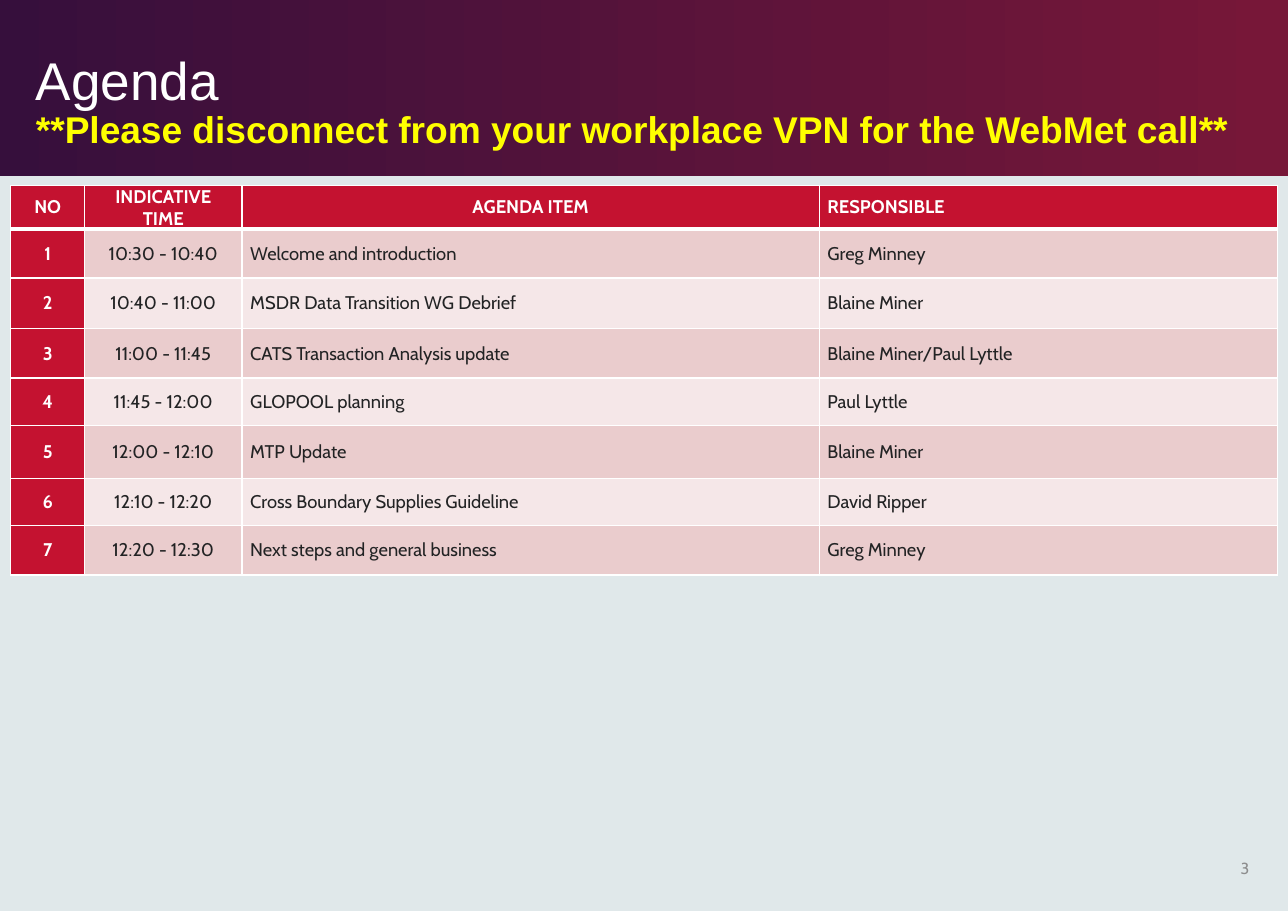
from lxml import etree
from pptx import Presentation
from pptx.dml.color import RGBColor
from pptx.enum.shapes import MSO_SHAPE
from pptx.enum.text import MSO_ANCHOR, PP_ALIGN
from pptx.oxml.ns import qn
from pptx.util import Cm, Pt

RECTANGLE = MSO_SHAPE.RECTANGLE
MIDDLE, BOTTOM = MSO_ANCHOR.MIDDLE, MSO_ANCHOR.BOTTOM
LEFT, CENTER, RIGHT = PP_ALIGN.LEFT, PP_ALIGN.CENTER, PP_ALIGN.RIGHT

COLORS = {
    "background": "E0E8EA",
    "banner_start": "360F3C",
    "banner_end": "771738",
    "white": "FFFFFF",
    "notice": "FFFF00",
    "page": "8D8D8E",
    "header": "C41230",
    "odd_row": "EACCCD",
    "even_row": "F5E7E8",
    "body": "222324",
}

COLUMN_WIDTHS = [1.7, 3.63, 13.31, 10.57]
ROW_HEIGHTS = [0.99, 1.12, 1.17, 1.14, 1.09, 1.22, 1.09, 1.14]
HEADINGS = ["NO", "INDICATIVE TIME", "AGENDA ITEM", "RESPONSIBLE"]
AGENDA = [
    ("10:30 - 10:40", "Welcome and introduction", "Greg Minney"),
    ("10:40 - 11:00", "MSDR Data Transition WG Debrief", "Blaine Miner"),
    ("11:00 - 11:45", "CATS Transaction Analysis update", "Blaine Miner/Paul Lyttle"),
    ("11:45 - 12:00", "GLOPOOL planning", "Paul Lyttle"),
    ("12:00 - 12:10", "MTP Update", "Blaine Miner"),
    ("12:10 - 12:20", "Cross Boundary Supplies Guideline", "David Ripper"),
    ("12:20 - 12:30", "Next steps and general business", "Greg Minney"),
]


class AgendaSlide:
    """Draws styled elements on one slide."""

    def __init__(self, slide):
        self.slide = slide
        background = slide.background.fill
        background.solid()
        background.fore_color.rgb = self.color("background")

    def color(self, name):
        return RGBColor.from_string(COLORS[name])

    def style(self, run, size, color, font="Cabin", bold=False):
        run.font.name = font
        run.font.size = Pt(size)
        run.font.bold = bold
        run.font.color.rgb = self.color(color)

    def banner(self, left, top, width, height):
        band = self.slide.shapes.add_shape(
            RECTANGLE, Cm(left), Cm(top), Cm(width), Cm(height))
        band.shadow.inherit = False
        band.line.fill.background()
        band.fill.gradient()
        band.fill.gradient_angle = 0
        ends = [("banner_start", 0), ("banner_end", 0.99)]
        for stop, (name, position) in zip(band.fill.gradient_stops, ends):
            stop.color.rgb = self.color(name)
            stop.position = position

    def text(self, left, top, width, height, lines, anchor, align=LEFT, spacing=1.0):
        frame = self.slide.shapes.add_textbox(
            Cm(left), Cm(top), Cm(width), Cm(height)).text_frame
        frame.word_wrap = True
        frame.vertical_anchor = anchor
        paragraph = frame.paragraphs[0]
        paragraph.text = "\n".join(words for words, _ in lines)
        paragraph.alignment = align
        paragraph.line_spacing = spacing
        for run, (_, look) in zip(paragraph.runs, lines):
            self.style(run, **look)

    def border(self, cell, side, points):
        line = etree.SubElement(
            cell._tc.get_or_add_tcPr(), qn(f"a:ln{side}"), w=str(Pt(points)))
        fill = etree.SubElement(line, qn("a:solidFill"))
        etree.SubElement(fill, qn("a:srgbClr"), val=COLORS["white"])

    def cell(self, cell, words, fill, color, bold, align, top_line, bottom_line):
        for side, points in zip("LRTB", (1, 1, top_line, bottom_line)):
            self.border(cell, side, points)
        cell.fill.solid()
        cell.fill.fore_color.rgb = self.color(fill)
        cell.vertical_anchor = MIDDLE
        cell.margin_left = cell.margin_right = Cm(0.19)
        cell.margin_top = cell.margin_bottom = 0
        cell.text_frame.text = words
        paragraph = cell.text_frame.paragraphs[0]
        paragraph.alignment = align
        self.style(paragraph.runs[0], 12, color, bold=bold)

    def table(self, left, top, widths, heights, rows):
        table = self.slide.shapes.add_table(
            len(rows), len(widths), Cm(left), Cm(top),
            Cm(sum(widths)), Cm(sum(heights))).table
        table.horz_banding = False
        for column, width in zip(table.columns, widths):
            column.width = Cm(width)
        for row, height in zip(table.rows, heights):
            row.height = Cm(height)
        for r, row in enumerate(rows):
            for c, words in enumerate(row):
                heading = r == 0 or c == 0
                band = "odd_row" if r % 2 else "even_row"
                centered = c < 2 or (r == 0 and c == 2)
                self.cell(
                    table.cell(r, c), words,
                    fill="header" if heading else band,
                    color="white" if heading else "body",
                    bold=heading,
                    align=CENTER if centered else LEFT,
                    top_line=3 if r == 1 else 1,
                    bottom_line=3 if r == 0 else 1)


def main():
    deck = Presentation()
    deck.slide_width, deck.slide_height = Cm(29.7), Cm(21)
    agenda = AgendaSlide(deck.slides.add_slide(deck.slide_layouts[6]))
    agenda.banner(0, 0, 29.7, 4.06)
    title = {"size": 34.7, "color": "white", "font": "Arial"}
    notice = {"size": 24.3, "color": "notice", "font": "Arial", "bold": True}
    agenda.text(0.58, 0, 29.12, 3.63, [
        ("Agenda", title),
        ("**Please disconnect from your workplace VPN for the WebMet call**", notice),
    ], BOTTOM, spacing=0.9)
    agenda.text(27.66, 19.46, 1.4, 1.12,
                [("3", {"size": 10.5, "color": "page"})], MIDDLE, RIGHT)
    items = [(str(number), *item) for number, item in enumerate(AGENDA, 1)]
    agenda.table(0.25, 4.27, COLUMN_WIDTHS, ROW_HEIGHTS, [HEADINGS, *items])
    deck.save("out.pptx")


if __name__ == "__main__":
    main()
